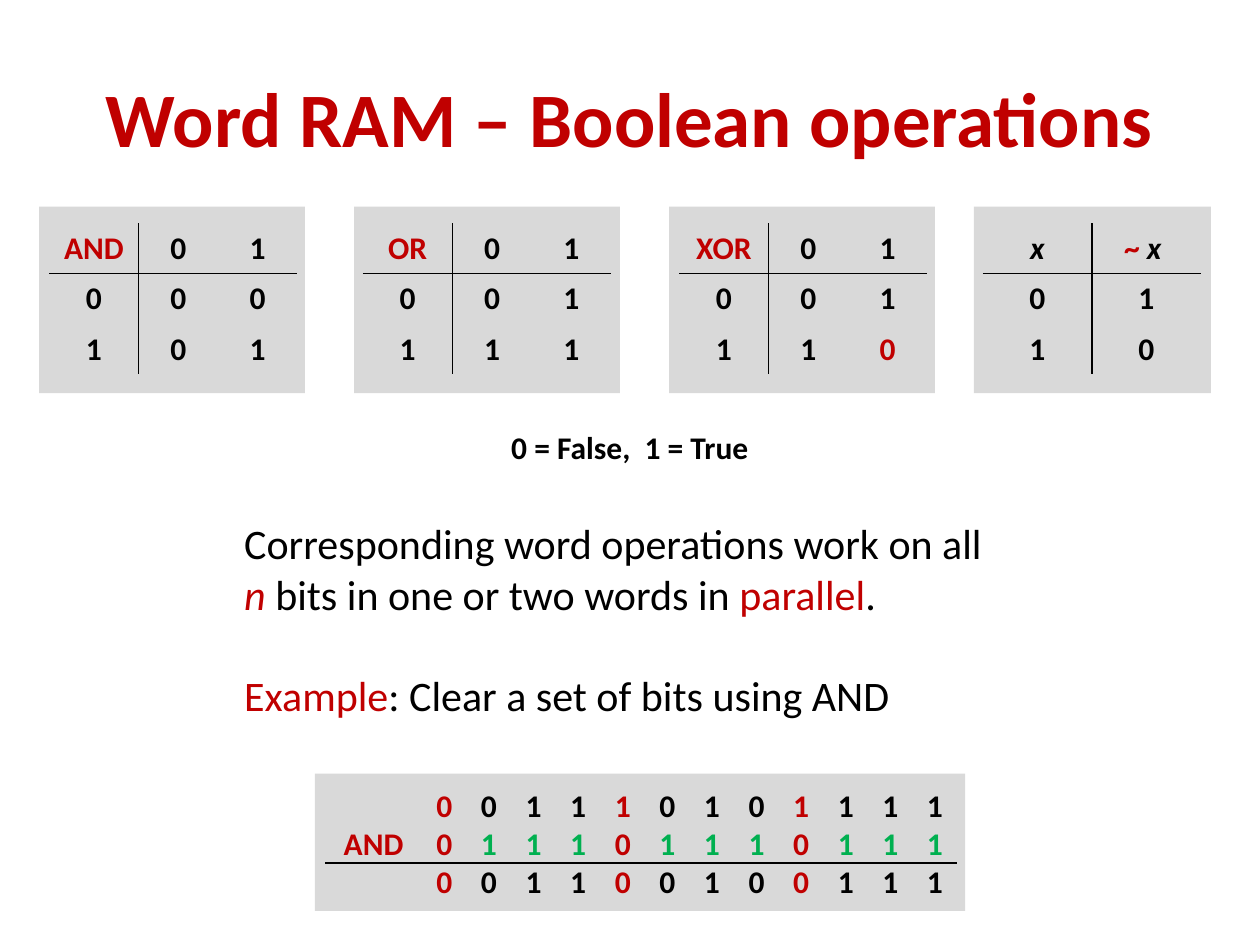
from dataclasses import dataclass
from typing import Callable

from lxml import etree
from pptx import Presentation
from pptx.dml.color import RGBColor
from pptx.enum.shapes import MSO_SHAPE
from pptx.enum.text import MSO_ANCHOR, PP_ALIGN
from pptx.oxml.ns import qn
from pptx.util import Inches, Pt

RECTANGLE = MSO_SHAPE.RECTANGLE
LEFT, CENTER = PP_ALIGN.LEFT, PP_ALIGN.CENTER
TOP, MIDDLE = MSO_ANCHOR.TOP, MSO_ANCHOR.MIDDLE

GRID = Inches(0.1)  # the page is 100 columns by 75 rows


@dataclass(frozen=True)
class Theme:
    font: str = "Calibri"
    black: str = "000000"
    red: str = "C00000"
    green: str = "00B050"
    panel: str = "D9D9D9"
    title: int = 44
    body: int = 24
    small: int = 18
    rule: int = 1


THEME = Theme()


@dataclass(frozen=True)
class Area:
    column: float
    row: float
    width: float
    height: float

    def box(self) -> list[int]:
        return [round(n * GRID) for n in (self.column, self.row, self.width, self.height)]


@dataclass(frozen=True)
class Span:
    text: str
    color: str = THEME.black
    italic: bool = False


@dataclass(frozen=True)
class Grid:
    area: Area
    panel: Area
    cells: list[list[list[Span]]]
    first_width: float
    row_height: float
    ruled_row: int  # the line runs under this row
    ruled_column: bool = True
    anchor: MSO_ANCHOR = TOP
    padding: float = 0.5


def write_spans(para, spans: list[Span], size: int, bold: bool, align: PP_ALIGN) -> None:
    para.alignment = align
    for span in spans:
        run = para.add_run()
        run.text = span.text
        run.font.name = THEME.font
        run.font.size = Pt(size)
        run.font.bold = bold
        run.font.italic = span.italic
        run.font.color.rgb = RGBColor.from_string(span.color)


def add_text(page, area: Area, lines: list[list[Span]], size: int,
             bold: bool = False, align: PP_ALIGN = LEFT, anchor: MSO_ANCHOR = TOP):
    frame = page.shapes.add_textbox(*area.box()).text_frame
    frame.word_wrap = True
    frame.vertical_anchor = anchor
    for index, spans in enumerate(lines):
        para = frame.add_paragraph() if index else frame.paragraphs[0]
        write_spans(para, spans, size, bold, align)
    return frame


def add_panel(page, area: Area) -> None:
    panel = page.shapes.add_shape(RECTANGLE, *area.box())
    panel.shadow.inherit = False
    panel.fill.solid()
    panel.fill.fore_color.rgb = RGBColor.from_string(THEME.panel)
    panel.line.fill.background()


def set_borders(cell, ruled_sides: set[str]) -> None:
    properties = cell._tc.get_or_add_tcPr()
    for side in "LRTB":
        line = etree.SubElement(properties, qn(f"a:ln{side}"), w=str(Pt(THEME.rule)))
        if side in ruled_sides:
            fill = etree.SubElement(line, qn("a:solidFill"))
            etree.SubElement(fill, qn("a:srgbClr"), val=THEME.black)
        else:
            etree.SubElement(line, qn("a:noFill"))


def add_grid(page, grid: Grid) -> None:
    add_panel(page, grid.panel)
    row_count, column_count = len(grid.cells), len(grid.cells[0])
    table = page.shapes.add_table(row_count, column_count, *grid.area.box()).table
    table.first_row = table.horz_banding = False
    other_width = (grid.area.width - grid.first_width) / (column_count - 1)
    for index, column in enumerate(table.columns):
        column.width = round((other_width if index else grid.first_width) * GRID)
    for row in table.rows:
        row.height = round(grid.row_height * GRID)

    for r, row_cells in enumerate(grid.cells):
        for c, spans in enumerate(row_cells):
            cell = table.cell(r, c)
            cell.vertical_anchor = grid.anchor
            cell.margin_top = cell.margin_bottom = round(grid.padding * GRID)
            write_spans(cell.text_frame.paragraphs[0], spans, THEME.small, True, CENTER)
            sides = {r - grid.ruled_row: ""}
            sides = {0: {"B"}, 1: {"T"}}.get(r - grid.ruled_row, set())
            if grid.ruled_column:
                sides = sides | {0: {"R"}, 1: {"L"}}.get(c, set())
            set_borders(cell, sides)
            cell.fill.background()


def truth_cells(name: str, operation: Callable[[int, int], int],
                marked: tuple[int, int] | None = None) -> list[list[list[Span]]]:
    head = [[Span(name, THEME.red)], [Span("0")], [Span("1")]]
    body = [
        [[Span(str(a))]] + [
            [Span(str(operation(a, b)), THEME.red if (a, b) == marked else THEME.black)]
            for b in (0, 1)
        ]
        for a in (0, 1)
    ]
    return [head] + body


def masking_cells(word: str, mask: str) -> list[list[list[Span]]]:
    result = "".join(str(int(a) & int(b)) for a, b in zip(word, mask))

    def bits(text: str, kept_color: str) -> list[list[Span]]:
        return [[Span(bit, THEME.red if keep == "0" else kept_color)]
                for bit, keep in zip(text, mask)]

    return [
        [[]] + bits(word, THEME.black),
        [[Span("AND", THEME.red)]] + bits(mask, THEME.green),
        [[]] + bits(result, THEME.black),
    ]


def main() -> None:
    deck = Presentation()
    deck.slide_width, deck.slide_height = 100 * GRID, 75 * GRID
    page = deck.slides.add_slide(deck.slide_layouts[6])

    # Title
    add_text(page, Area(5, 3, 90, 12.5), [[Span("Word RAM – Boolean operations", THEME.red)]],
             THEME.title, True, CENTER, MIDDLE)

    # Truth tables of the two-operand operations
    operations = [
        (3.9, truth_cells("AND", lambda a, b: a & b)),
        (28.8, truth_cells("OR", lambda a, b: a | b)),
        (53.9, truth_cells("XOR", lambda a, b: a ^ b, marked=(1, 1))),
    ]
    for index, (column, cells) in enumerate(operations):
        add_grid(page, Grid(Area(column, 17.7, 19.7, 12), Area(3.1 + 25 * index, 16.4, 21.1, 14.8),
                            cells, 7.1, 4, 0))

    # Truth table of negation
    negation = [[[Span("x", italic=True)], [Span("~ ", THEME.red), Span("x ", italic=True)]]]
    negation += [[[Span(str(a))], [Span(str(1 - a))]] for a in (0, 1)]
    add_grid(page, Grid(Area(78, 17.7, 17.3, 12), Area(77.3, 16.4, 18.8, 14.8),
                        negation, 8.65, 4, 0))

    # Legend and explanation
    add_text(page, Area(33.2, 33.5, 33.6, 4), [[Span("0 = False,  1 = True")]],
             THEME.small, True, CENTER)
    body = add_text(page, Area(18.4, 40.6, 63.3, 17.2), [
        [Span("Corresponding word operations work on all")],
        [Span("n", THEME.red, True), Span(" bits in one or two words in "),
         Span("parallel", THEME.red), Span(".")],
        [Span("Example", THEME.red), Span(": Clear a set of bits using AND")],
    ], THEME.body)
    body.paragraphs[-1].space_before = Pt(1.22 * THEME.body)  # one line of text

    # Masking example
    add_grid(page, Grid(Area(25.8, 62.5, 50.2, 9), Area(25, 61.4, 51.6, 10.9),
                        masking_cells("001110101111", "011101110111"), 7.7, 3, 1,
                        ruled_column=False, anchor=MIDDLE, padding=0))

    deck.save("out.pptx")


if __name__ == "__main__":
    main()
